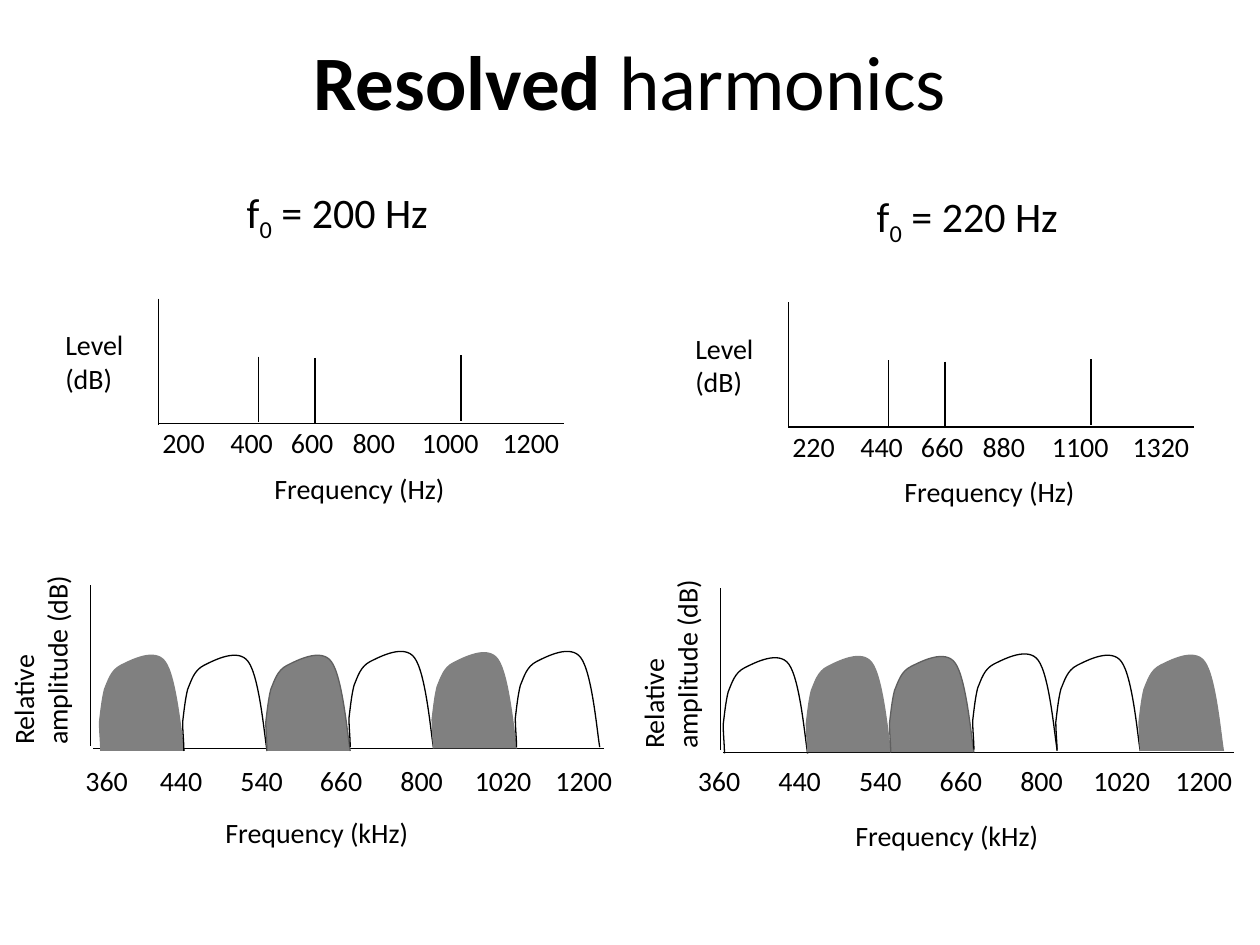
from lxml.etree import SubElement
from pptx import Presentation
from pptx.dml.color import RGBColor
from pptx.enum.shapes import MSO_CONNECTOR as CONN
from pptx.enum.text import MSO_ANCHOR as ANCHOR, MSO_AUTO_SIZE as FIT, PP_ALIGN as ALIGN
from pptx.oxml.ns import qn
from pptx.util import Pt

PX = 9144
FONT = "Calibri"
COLORS = {"ink": "000000", "band": "808080", "edge": "5F5F5F"}
FILTER = [(1, 82), (1, 75), (0, 67), (0, 59), (1, 51), (2, 41), (4, 33),
          (7, 26), (9, 18), (17, 14), (25, 10), (44, 0), (52, 11),
          (61, 23), (65, 71), (67, 82)]
SPECTRUM_STOPS = [54, 102, 151, 206, 270]
BAND_LABELS = ["360", "440", "540", "660", "800", "1020", "1200"]
PANELS = [
    {"dx": 0, "dy": 0, "f0": 200, "bands": (0, 2, 4),
     "tops": [514, 514, 514, 511, 512, 511],
     "ticks": (58, 477), "stops": [59, 123, 186, 250, 309, 373]},
    {"dx": 500, "dy": 3, "f0": 220, "bands": (1, 2, 5),
     "tops": [516, 515, 515, 513, 514, 514],
     "ticks": (544, 463), "stops": [64, 128, 192, 256, 314, 379]},
]


class Deck:
    def __init__(self):
        self.prs = Presentation()
        self.prs.slide_width, self.prs.slide_height = 1000 * PX, 750 * PX
        self.s = self.prs.slides.add_slide(self.prs.slide_layouts[5])
        self.target = self.s.shapes
        self.dx = self.dy = 0

    def color(self, name):
        return RGBColor.from_string(COLORS[name])

    def group(self):
        self.target = self.s.shapes.add_group_shape().shapes

    def ungroup(self):
        self.target = self.s.shapes

    def font(self, r, size, bold=False):
        r.font.name, r.font.size, r.font.bold = FONT, Pt(size), bold
        r.font.color.rgb = self.color("ink")

    def title(self, strong, rest):
        sp = self.s.shapes.title
        sp.left, sp.top, sp.width, sp.height = 49 * PX, 21 * PX, 902 * PX, 85 * PX
        tf = sp.text_frame
        tf.vertical_anchor = ANCHOR.MIDDLE
        p = tf.paragraphs[0]
        p.alignment = ALIGN.CENTER
        for text, bold in ((strong, True), (rest, False)):
            r = p.add_run()
            r.text = text
            self.font(r, 44, bold)

    def text(self, x, y, w, h, text, size=16, wrap=False, angle=0):
        sp = self.target.add_textbox((x + self.dx) * PX, (y + self.dy) * PX, w * PX, h * PX)
        sp.rotation = angle
        tf = sp.text_frame
        tf.text = text
        tf.word_wrap = wrap
        tf.auto_size = FIT.SHAPE_TO_FIT_TEXT
        for p in tf.paragraphs:
            for r in p.runs:
                self.font(r, size)
        return tf

    def ticks(self, x, y, w, labels, stops):
        tf = self.text(x, y, w, 37, "\t".join(labels), wrap=True)
        tabs = SubElement(tf.paragraphs[0]._p.get_or_add_pPr(), qn("a:tabLst"))
        for stop in stops:
            SubElement(tabs, qn("a:tab"), pos=str(stop * PX), algn="l")

    def heading(self, x, y, w, h, value):
        p = self.text(x, y, w, h, "f", 24, wrap=True).paragraphs[0]
        for text in ("0", f" = {value} Hz"):
            r = p.add_run()
            r.text = text
            self.font(r, 24)
        p.runs[1]._r.get_or_add_rPr().set("baseline", "-25000")

    def line(self, x1, y1, x2, y2):
        c = self.target.add_connector(
            CONN.STRAIGHT, (x1 + self.dx) * PX, (y1 + self.dy) * PX,
            (x2 + self.dx) * PX, (y2 + self.dy) * PX)
        c.line.color.rgb = self.color("ink")
        c.line.width = Pt(0.75)
        SubElement(c._element.spPr, qn("a:effectLst"))

    def curve(self, x, y, points, fill, line):
        fb = self.target.build_freeform(*points[0], scale=PX)
        fb.add_line_segments(points[1:], close=False)
        sp = fb.convert_to_shape(x * PX, y * PX)
        outline = sp._element.find(".//" + qn("a:path"))
        segments = outline.findall(qn("a:lnTo"))
        for i in range(0, len(segments), 3):
            bezier = SubElement(outline, qn("a:cubicBezTo"))
            for seg in segments[i:i + 3]:
                bezier.append(seg[0])
                outline.remove(seg)
        sp.shadow.inherit = False
        if fill:
            sp.fill.solid()
            sp.fill.fore_color.rgb = self.color(fill)
        else:
            sp.fill.background()
        sp.line.color.rgb = self.color(line)
        sp.line.width = Pt(0.75)

    def spectrum(self, f0):
        self.group()
        self.line(126, 237, 126, 337)
        self.line(126, 336, 448, 336)
        self.ticks(119, 333, 342, [str(f0 * n) for n in range(1, 7)], SPECTRUM_STOPS)
        for x, top in ((205, 283), (250, 284), (366, 282)):
            self.line(x, top, x, top + 52)
        self.text(42, 255, 67, 64, "Level\n(dB)")
        self.text(208, 369, 160, 37, "Frequency (Hz)")
        self.ungroup()

    def filter_axes(self):
        self.text(-46, 491, 156, 64, "Relative\namplitude (dB)", angle=270)
        self.text(169, 642, 172, 37, "Frequency (kHz)")
        self.line(72, 592, 72, 464)
        self.line(74, 594, 479, 594)

    def filters(self, x, tops, bands):
        self.group()
        for i, top in enumerate(tops):
            fill = "band" if i in bands else None
            line = "edge" if i == 2 else fill or "ink"
            self.curve(x + 66 * i, top, FILTER, fill, line)
        self.ungroup()


def main():
    deck = Deck()
    deck.title("Resolved", " harmonics")
    for panel in PANELS:
        deck.dx, deck.dy = panel["dx"], panel["dy"]
        deck.heading(186, 143, 175, 50, panel["f0"])
        deck.spectrum(panel["f0"])
        deck.filter_axes()
        deck.filters(79 + min(deck.dx, 495), panel["tops"], panel["bands"])
        deck.dx = deck.dy = 0
        x, w = panel["ticks"]
        deck.ticks(x, 601, w, BAND_LABELS, panel["stops"])
    deck.prs.save("out.pptx")


if __name__ == "__main__":
    main()
